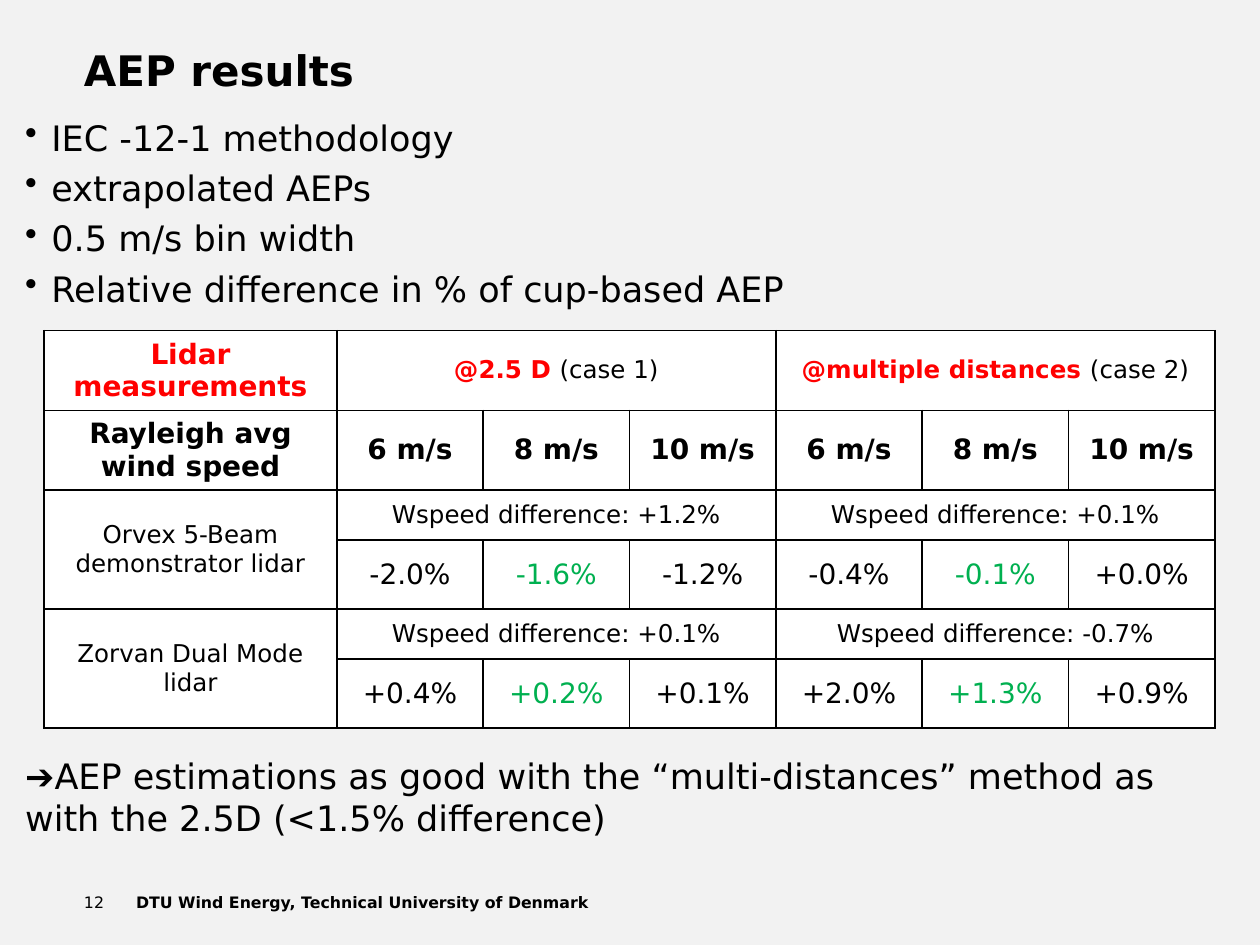
from dataclasses import dataclass

from lxml import etree
from pptx import Presentation
from pptx.dml.color import RGBColor
from pptx.enum.text import MSO_ANCHOR, PP_ALIGN
from pptx.oxml.ns import qn
from pptx.util import Pt

MIDDLE = MSO_ANCHOR.MIDDLE
CENTER = PP_ALIGN.CENTER
BLANK_LAYOUT = 6


@dataclass(frozen=True)
class Theme:
    font: str = "DejaVu Sans"
    background: str = "F2F2F2"
    cell: str = "FFFFFF"
    ink: str = "000000"
    accent: str = "FF0000"
    good: str = "00B050"
    title: float = 24
    body: float = 20
    table: float = 16
    label: float = 14
    footer: float = 9


class SlideBuilder:
    def __init__(self, slide, theme):
        self.slide = slide
        self.theme = theme
        fill = slide.background.fill
        fill.solid()
        fill.fore_color.rgb = RGBColor.from_string(theme.background)

    def run(self, para, text, size, color=None, bold=False):
        span = para.add_run()
        span.text = text
        font = span.font
        font.name = self.theme.font
        font.size = Pt(size)
        font.bold = bold
        font.color.rgb = RGBColor.from_string(color or self.theme.ink)

    def text(self, area, lines, size, bold=False, bullet=False):
        box = self.slide.shapes.add_textbox(*map(Pt, area))
        frame = box.text_frame
        frame.word_wrap = True
        frame.margin_left = frame.margin_right = 0
        frame.margin_top = frame.margin_bottom = 0
        for index, line in enumerate(lines):
            para = frame.paragraphs[0] if index == 0 else frame.add_paragraph()
            if index:
                para.space_before = Pt(4.7)
            if bullet:
                self.bullet(para)
            self.run(para, line, size, bold=bold)

    def bullet(self, para):
        properties = para._p.get_or_add_pPr()
        properties.set("marL", str(Pt(15)))
        properties.set("indent", str(Pt(-15)))
        etree.SubElement(properties, qn("a:buChar")).set("char", "•")

    def table(self, left, top, columns, rows):
        frame = self.slide.shapes.add_table(
            len(rows), len(columns), Pt(left), Pt(top), Pt(sum(columns)), Pt(sum(rows)))
        table = frame.table
        for column, width in zip(table.columns, columns):
            column.width = Pt(width)
        for row, height in zip(table.rows, rows):
            row.height = Pt(height)
            for cell in row.cells:
                self.borders(cell)
                cell.fill.solid()
                cell.fill.fore_color.rgb = RGBColor.from_string(self.theme.cell)
        return table

    def borders(self, cell):
        properties = cell._tc.get_or_add_tcPr()
        for side in ("lnL", "lnR", "lnT", "lnB"):
            line = etree.SubElement(properties, qn(f"a:{side}"), w=str(Pt(1)))
            fill = etree.SubElement(line, qn("a:solidFill"))
            etree.SubElement(fill, qn("a:srgbClr"), val=self.theme.ink)

    def cell(self, table, row, column, runs, span=(1, 1)):
        """Fill a cell with (text, size, color, bold) runs, merged over span rows and columns."""
        cell = table.cell(row, column)
        if span != (1, 1):
            cell.merge(table.cell(row + span[0] - 1, column + span[1] - 1))
        cell.vertical_anchor = MIDDLE
        para = cell.text_frame.paragraphs[0]
        para.alignment = CENTER
        for run in runs:
            self.run(para, *run)


CASES = [("@2.5 D ", "(case 1)"), ("@multiple distances ", "(case 2)")]
SPEEDS = ["6 m/s", "8 m/s", "10 m/s"]
LIDARS = [
    ("Orvex 5-Beam demonstrator lidar",
     [("+1.2%", ["-2.0%", "-1.6%", "-1.2%"]), ("+0.1%", ["-0.4%", "-0.1%", "+0.0%"])]),
    ("Zorvan Dual Mode lidar",
     [("+0.1%", ["+0.4%", "+0.2%", "+0.1%"]), ("-0.7%", ["+2.0%", "+1.3%", "+0.9%"])]),
]


def add_results(builder):
    theme = builder.theme
    table = builder.table(25.2, 188.9, [167.3] + [83.65] * 6, [44.3] * 2 + [28.4, 39.6] * 2)
    builder.cell(table, 0, 0, [("Lidar measurements", theme.table, theme.accent, True)])
    builder.cell(table, 1, 0, [("Rayleigh avg wind speed", theme.table, theme.ink, True)])
    for case, (distance, note) in enumerate(CASES):
        first = 1 + case * len(SPEEDS)
        builder.cell(table, 0, first, [(distance, theme.label, theme.accent, True),
                                       (note, theme.label)], (1, 3))
        for offset, speed in enumerate(SPEEDS):
            builder.cell(table, 1, first + offset, [(speed, theme.table, theme.ink, True)])
    for index, (lidar, results) in enumerate(LIDARS):
        row = 2 + 2 * index
        builder.cell(table, row, 0, [(lidar, theme.label)], (2, 1))
        for case, (difference, values) in enumerate(results):
            first = 1 + case * len(SPEEDS)
            builder.cell(table, row, first,
                         [(f"Wspeed difference: {difference}", theme.label)], (1, 3))
            for offset, value in enumerate(values):
                color = theme.good if offset == 1 else theme.ink
                builder.cell(table, row + 1, first + offset, [(value, theme.table, color)])


def main():
    theme = Theme()
    deck = Presentation()
    deck.slide_width, deck.slide_height = Pt(720), Pt(540)
    slide = deck.slides.add_slide(deck.slide_layouts[BLANK_LAYOUT])
    builder = SlideBuilder(slide, theme)

    builder.text((48, 25.5, 612, 42), ["AEP results"], theme.title, bold=True)
    builder.text((14.4, 66.5, 692, 112), [
        "IEC -12-1 methodology",
        "extrapolated AEPs",
        "0.5 m/s bin width",
        "Relative difference in % of cup-based AEP",
    ], theme.body, bullet=True)
    add_results(builder)
    builder.text((14.4, 431, 692, 48), [
        "➔AEP estimations as good with the “multi-distances” method "
        "as with the 2.5D (<1.5% difference)",
    ], theme.body)
    builder.text((48, 510, 24, 24), ["12"], theme.footer)
    builder.text((77.8, 510, 333, 24),
                 ["DTU Wind Energy, Technical University of Denmark"], theme.footer, bold=True)
    deck.save("out.pptx")


if __name__ == "__main__":
    main()
